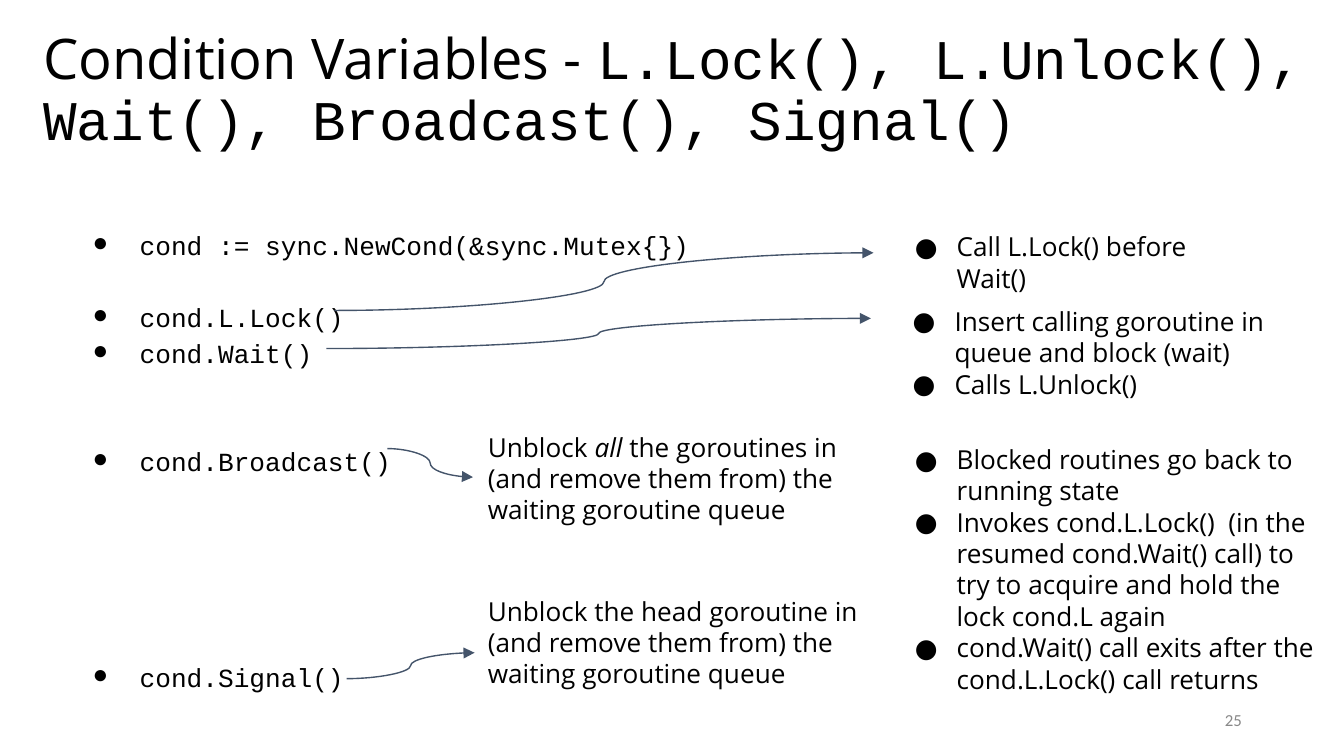
from lxml.etree import SubElement
from pptx import Presentation
from pptx.dml.color import RGBColor
from pptx.enum.shapes import MSO_CONNECTOR as Connector
from pptx.enum.text import MSO_ANCHOR as Anchor, PP_ALIGN as Align
from pptx.oxml.ns import qn
from pptx.util import Cm, Pt

COLORS = {"text": "000000", "arrow": "44546A", "number": "888888"}
SANS, MONO = "Open Sans", "Courier New"
LINE_PITCH = 19.3  # points between lines of the code list


def add_text(s, box, paragraphs, font=SANS, size=14, color="text", inset=(0.25, 0.25)):
    """Add a text box; each paragraph is a list of run texts."""
    sp = s.shapes.add_textbox(*map(Cm, box))
    tf = sp.text_frame
    tf.word_wrap = True
    tf.margin_left = tf.margin_right = Cm(inset[0])
    tf.margin_top = tf.margin_bottom = Cm(inset[1])
    for i, texts in enumerate(paragraphs):
        p = tf.paragraphs[0] if i == 0 else tf.add_paragraph()
        for text in texts:
            r = p.add_run()
            r.text = text
            r.font.name, r.font.size = font, Pt(size)
            r.font.color.rgb = RGBColor.from_string(COLORS[color])
    return tf


def add_bullets(s, box, items, font=SANS, margin=0.79, hang=0.79):
    tf = add_text(s, box, [[item] for item in items], font)
    for p in tf.paragraphs:
        pPr = p._p.get_or_add_pPr()
        pPr.set("marL", str(Cm(margin)))
        pPr.set("indent", str(-Cm(hang)))
        color = SubElement(pPr, qn("a:buClr"))
        SubElement(color, qn("a:srgbClr"), val=COLORS["text"])
        SubElement(pPr, qn("a:buFont"), typeface=font)
        SubElement(pPr, qn("a:buChar"), char="●")
    return tf


def add_curve(s, x1, y1, x2, y2):
    line = s.shapes.add_connector(Connector.CURVE, Cm(x1), Cm(y1), Cm(x2), Cm(y2))
    line.line.color.rgb = RGBColor.from_string(COLORS["arrow"])
    line.line.width = Pt(0.75)
    SubElement(line.line._get_or_add_ln(), qn("a:tailEnd"), type="triangle")
    SubElement(line._element.spPr, qn("a:effectLst"))


def add_title(s):
    tf = add_text(s, (0.64, 0.3, 24.36, 2.87),
                  [["Condition Variables - ", "L.Lock(), L.Unlock(),"],
                   ["Wait(), Broadcast(), Signal()"]],
                  MONO, 30, inset=(0.18, 0.1))
    tf.vertical_anchor = Anchor.MIDDLE
    tf.paragraphs[0].runs[0].font.name = SANS
    for p in tf.paragraphs:
        p.line_spacing = 0.9


def add_code_list(s):
    # Calls, each with the number of free lines above it
    calls = {"cond := sync.NewCond(&sync.Mutex{})": 0, "cond.L.Lock()": 1,
             "cond.Wait()": 0, "cond.Broadcast()": 2, "cond.Signal()": 5}
    tf = add_bullets(s, (1.12, 3.99, 13.59, 9.53), calls, MONO, 1.27, 0.89)
    for p, gap in zip(tf.paragraphs, calls.values()):
        p.line_spacing = 1.15
        p.space_before = Pt(gap * LINE_PITCH)


def main():
    prs = Presentation()
    prs.slide_width, prs.slide_height = Cm(25.4), Cm(14.29)
    s = prs.slides.add_slide(prs.slide_layouts[6])

    add_title(s)
    add_code_list(s)

    # Notes on the right
    add_bullets(s, (17.04, 4.11, 6.4, 1.24), ["Call L.Lock() before Wait()"])
    add_bullets(s, (17, 5.52, 8.1, 2.72),
                ["Insert calling goroutine in queue and block (wait)",
                 "Calls L.Unlock()"])
    add_bullets(s, (17.04, 8.13, 8.1, 5.28),
                ["Blocked routines go back to running state",
                 "Invokes cond.L.Lock()  (in the resumed cond.Wait() call) to "
                 "try to acquire and hold the lock cond.L again",
                 "cond.Wait() call exits after the cond.L.Lock() call returns"])

    # Notes in the middle
    rest = "(and remove them from) the waiting goroutine queue"
    tf = add_text(s, (8.97, 7.9, 7.82, 2.72),
                  [["Unblock ", "all", " the goroutines in " + rest]])
    tf.paragraphs[0].runs[1].font.italic = True
    add_text(s, (8.97, 11, 7.82, 2.72), [["Unblock the head goroutine in " + rest]])

    # Arrows from calls to notes
    for ends in [(6.32, 5.87, 16.51, 4.78), (6.17, 6.59, 16.46, 6.02),
                 (7.32, 8.48, 8.94, 9.02), (6.55, 12.83, 8.97, 12.34)]:
        add_curve(s, *ends)

    # Slide number
    tf = add_text(s, (17.93, 13.23, 5.72, 0.76), [["25"]], "Calibri", 9, "number",
                  inset=(0.18, 0.1))
    tf.vertical_anchor = Anchor.MIDDLE
    tf.paragraphs[0].alignment = Align.RIGHT

    prs.save("out.pptx")


if __name__ == "__main__":
    main()
